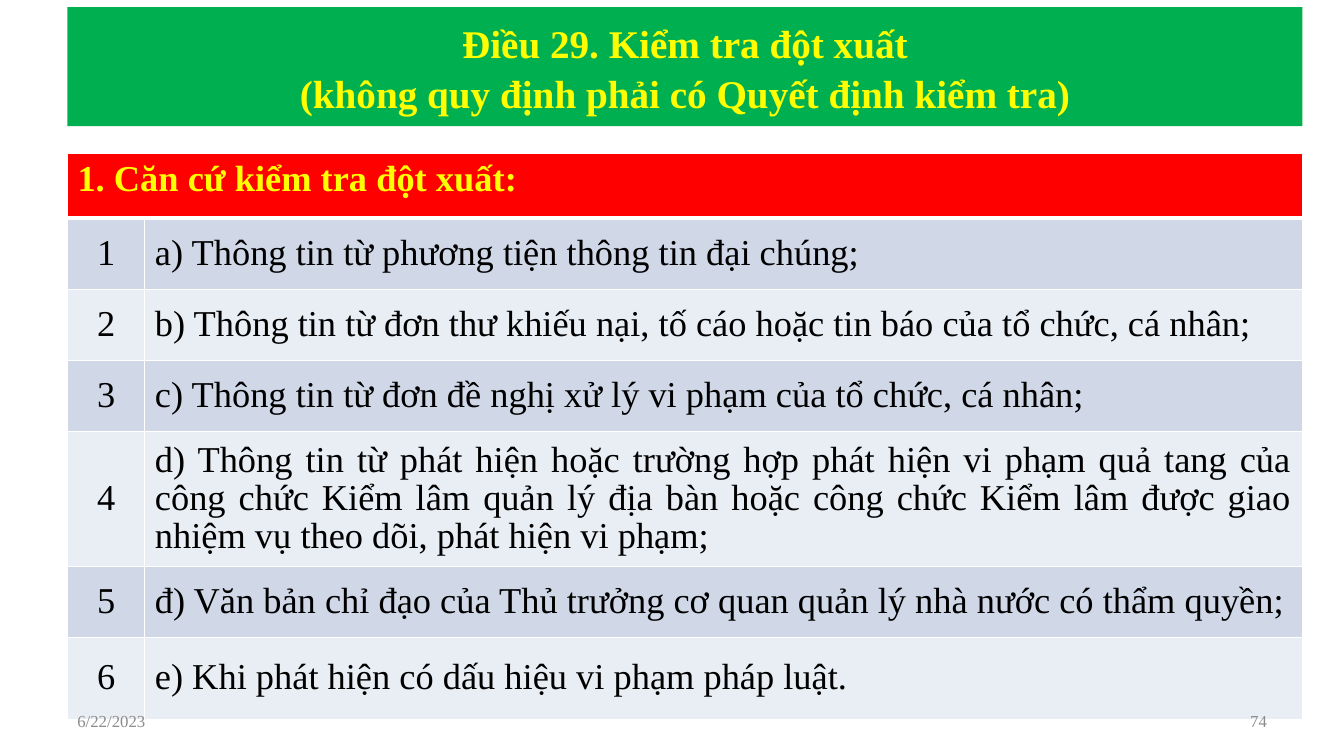
"""Build the slide on the grounds for unscheduled inspections."""
from dataclasses import dataclass

from lxml import etree
from pptx import Presentation
from pptx.dml.color import RGBColor
from pptx.enum import shapes, text
from pptx.oxml import ns
from pptx.util import Cm, Pt

FONT = "Times New Roman"
YELLOW, BLACK, GREY, WHITE = "FFFF00", "000000", "8C8C8C", "FFFFFF"
GREEN, RED = "00B050", "FF0000"
BANDS = ("D0D8E8", "E9EDF4")
LEFT, WIDTH = Cm(1.7), Cm(31.12)
NUMBER_WIDTH = Cm(1.95)
HEADER_HEIGHT = Cm(1.63)
ALIGN = text.PP_ALIGN
MIDDLE = text.MSO_ANCHOR.MIDDLE


@dataclass(frozen=True)
class Style:
    size: float
    color: str
    bold: bool = False
    align: text.PP_ALIGN = ALIGN.LEFT
    spacing: float = 1.0


@dataclass(frozen=True)
class Ground:
    wording: str
    height: float = 1.79


@dataclass(frozen=True)
class FooterNote:
    wording: str
    left: float
    align: text.PP_ALIGN


TITLE_LINES = (
    "Điều 29. Kiểm tra đột xuất",
    "(không quy định phải có Quyết định kiểm tra)",
)
HEADING = "1. Căn cứ kiểm tra đột xuất:"
GROUNDS = (
    Ground("a) Thông tin từ phương tiện thông tin đại chúng;"),
    Ground("b) Thông tin từ đơn thư khiếu nại, tố cáo hoặc tin báo của tổ chức, cá nhân;"),
    Ground("c) Thông tin từ đơn đề nghị xử lý vi phạm của tổ chức, cá nhân;"),
    Ground(
        "d) Thông tin từ phát hiện hoặc trường hợp phát hiện vi phạm quả tang của "
        "công chức Kiểm lâm quản lý địa bàn hoặc công chức Kiểm lâm được giao "
        "nhiệm vụ theo dõi, phát hiện vi phạm;",
        3.4,
    ),
    Ground("đ) Văn bản chỉ đạo của Thủ trưởng cơ quan quản lý nhà nước có thẩm quyền;"),
    Ground("e) Khi phát hiện có dấu hiệu vi phạm pháp luật.", 2.07),
)
FOOTER_NOTES = (
    FooterNote("6/22/2023", 1.7, ALIGN.LEFT),
    FooterNote("74", 24.28, ALIGN.RIGHT),
)


def rgb(value: str) -> RGBColor:
    return RGBColor.from_string(value)


def write(frame, lines: tuple[str, ...], style: Style) -> None:
    paragraph = frame.paragraphs[0]
    paragraph.alignment = style.align
    paragraph.line_spacing = style.spacing
    for index, line in enumerate(lines):
        if index:
            paragraph.add_line_break()
        run = paragraph.add_run()
        run.text = line
        run.font.name = FONT
        run.font.size = Pt(style.size)
        run.font.bold = style.bold
        run.font.color.rgb = rgb(style.color)


def set_borders(cell, top: float = 1, bottom: float = 1) -> None:
    properties = cell._tc.get_or_add_tcPr()
    sides = {"lnL": 1, "lnR": 1, "lnT": top, "lnB": bottom}
    for index, (side, width) in enumerate(sides.items()):
        line = etree.Element(ns.qn(f"a:{side}"), w=str(Pt(width)))
        fill = etree.SubElement(line, ns.qn("a:solidFill"))
        etree.SubElement(fill, ns.qn("a:srgbClr"), val=WHITE)
        properties.insert(index, line)


def fill_cell(cell, wording: str, fill: str, style: Style) -> None:
    cell.fill.solid()
    cell.fill.fore_color.rgb = rgb(fill)
    write(cell.text_frame, (wording,), style)


def add_grounds_table(slide) -> None:
    height = HEADER_HEIGHT + sum(Cm(ground.height) for ground in GROUNDS)
    table = slide.shapes.add_table(
        len(GROUNDS) + 1, 2, LEFT, Cm(3.87), WIDTH, height
    ).table
    table.columns[0].width = NUMBER_WIDTH
    table.columns[1].width = WIDTH - NUMBER_WIDTH
    table.rows[0].height = HEADER_HEIGHT
    table.cell(0, 0).merge(table.cell(0, 1))
    fill_cell(table.cell(0, 0), HEADING, RED, Style(26, YELLOW, True, ALIGN.JUSTIFY))
    for column in range(2):
        set_borders(table.cell(0, column), bottom=3)

    for number, ground in enumerate(GROUNDS, start=1):
        table.rows[number].height = Cm(ground.height)
        entries = ((str(number), ALIGN.CENTER), (ground.wording, ALIGN.JUSTIFY))
        for column, (wording, align) in enumerate(entries):
            cell = table.cell(number, column)
            cell.vertical_anchor = MIDDLE
            style = Style(26, BLACK, align=align, spacing=0.95)
            fill_cell(cell, wording, BANDS[(number - 1) % 2], style)
            set_borders(cell, top=3 if number == 1 else 1)


def add_footer_note(slide, note: FooterNote) -> None:
    box = slide.shapes.add_textbox(Cm(note.left), Cm(17.65), Cm(7.9), Cm(1.02))
    box.text_frame.word_wrap = True
    box.text_frame.vertical_anchor = MIDDLE
    write(box.text_frame, (note.wording,), Style(12, GREY, align=note.align))


def add_title(slide) -> None:
    shape = slide.shapes.add_shape(
        shapes.MSO_SHAPE.RECTANGLE, LEFT, Cm(0.18), WIDTH, Cm(3)
    )
    shape.shadow.inherit = False
    shape.fill.solid()
    shape.fill.fore_color.rgb = rgb(GREEN)
    shape.line.fill.background()
    shape.text_frame.word_wrap = True
    shape.text_frame.vertical_anchor = MIDDLE
    write(shape.text_frame, TITLE_LINES, Style(28, YELLOW, True, ALIGN.CENTER, 1.05))


def main() -> None:
    presentation = Presentation()
    presentation.slide_width, presentation.slide_height = Cm(33.87), Cm(19.05)
    slide = presentation.slides.add_slide(presentation.slide_layouts[6])
    add_grounds_table(slide)
    for note in FOOTER_NOTES:
        add_footer_note(slide, note)
    add_title(slide)
    presentation.save("out.pptx")


if __name__ == "__main__":
    main()
